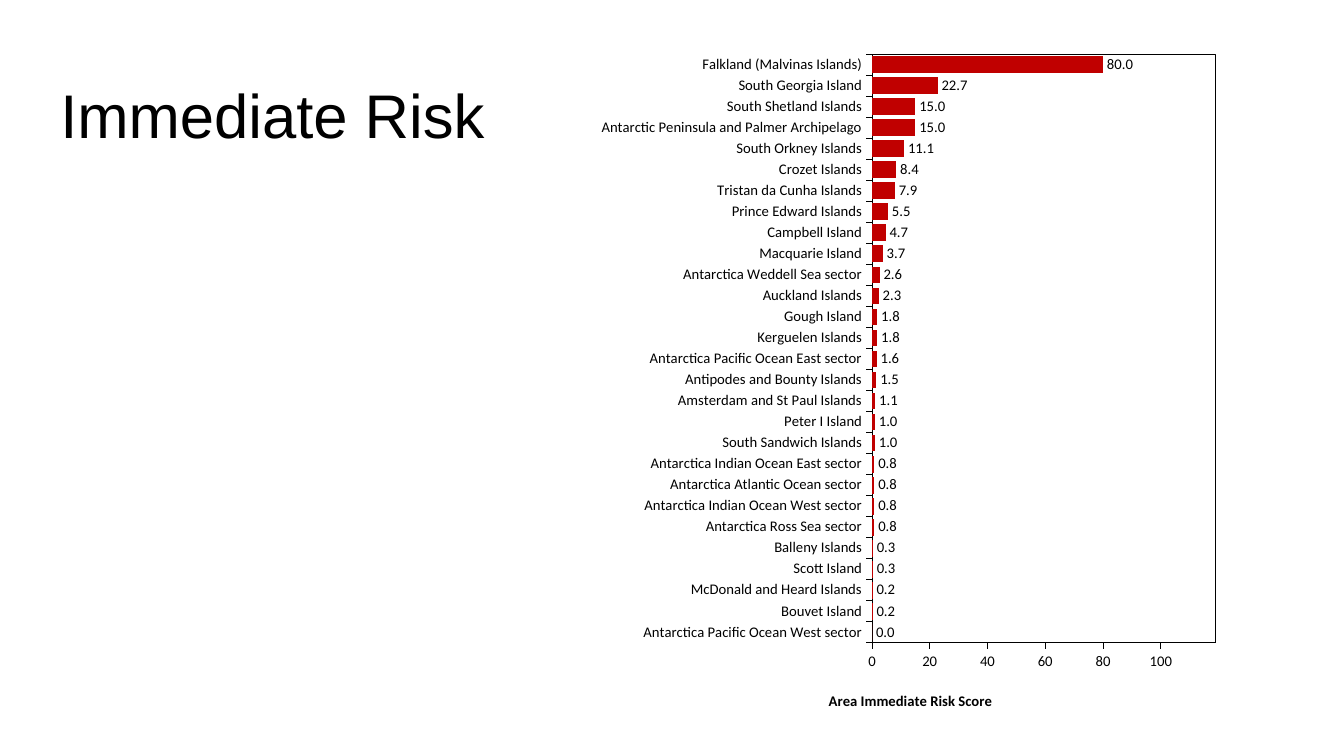
from lxml import etree
from pptx import Presentation
from pptx.chart.data import CategoryChartData as Data
from pptx.dml.color import RGBColor
from pptx.enum.chart import XL_CHART_TYPE as Kind, XL_LABEL_POSITION as Pos
from pptx.enum.chart import XL_TICK_MARK as Tick
from pptx.enum.text import MSO_ANCHOR as Anchor
from pptx.oxml import parse_xml
from pptx.oxml.ns import nsdecls, qn
from pptx.util import Cm, Pt

BLACK = RGBColor(0, 0, 0)
RED = RGBColor(0xC0, 0, 0)

SCORES = [
    ("Falkland (Malvinas Islands)", 80),
    ("South Georgia Island", 22.7),
    ("South Shetland Islands", 15),
    ("Antarctic Peninsula and Palmer Archipelago", 15),
    ("South Orkney Islands", 11.1),
    ("Crozet Islands", 8.4),
    ("Tristan da Cunha Islands", 7.9),
    ("Prince Edward Islands", 5.5),
    ("Campbell Island", 4.7),
    ("Macquarie Island", 3.7),
    ("Antarctica Weddell Sea sector", 2.6),
    ("Auckland Islands", 2.3),
    ("Gough Island", 1.8),
    ("Kerguelen Islands", 1.8),
    ("Antarctica Pacific Ocean East sector", 1.6),
    ("Antipodes and Bounty Islands", 1.5),
    ("Amsterdam and St Paul Islands", 1.1),
    ("Peter I Island", 1),
    ("South Sandwich Islands", 1),
    ("Antarctica Indian Ocean East sector", 0.8),
    ("Antarctica Atlantic Ocean sector", 0.8),
    ("Antarctica Indian Ocean West sector", 0.8),
    ("Antarctica Ross Sea sector", 0.8),
    ("Balleny Islands", 0.3),
    ("Scott Island", 0.3),
    ("McDonald and Heard Islands", 0.2),
    ("Bouvet Island", 0.2),
    ("Antarctica Pacific Ocean West sector", 0),
]


def place(parent, index, **parts):
    """Give a chart part a manual layout, in fractions of the chart."""
    for old in parent.findall(qn("c:layout")):
        parent.remove(old)
    layout = parse_xml(f"<c:layout {nsdecls('c')}><c:manualLayout/></c:layout>")
    modes = {"xMode": "edge", "yMode": "edge"}
    if "w" in parts:
        modes = {"layoutTarget": "inner", **modes}
    for tag, val in {**modes, **parts}.items():
        etree.SubElement(layout[0], qn(f"c:{tag}")).set("val", str(val))
    parent.insert(index, layout)


class Deck:
    def __init__(self):
        self.show = Presentation()
        self.show.slide_width = Cm(33.87)
        self.show.slide_height = Cm(19.05)
        self.slide = self.show.slides.add_slide(self.show.slide_layouts[6])

    def style(self, font, size, name="Calibri", bold=False):
        font.name, font.size, font.bold = name, Pt(size), bold
        font.color.rgb = BLACK

    def title(self, text, *box):
        frame = self.slide.shapes.add_textbox(*map(Cm, box)).text_frame
        frame.word_wrap = True
        frame.vertical_anchor = Anchor.MIDDLE
        frame.text = text
        self.style(frame.paragraphs[0].runs[0].font, 44, "Arial")

    def axis(self, axis):
        axis.has_major_gridlines = False
        axis.major_tick_mark = Tick.OUTSIDE
        axis.minor_tick_mark = Tick.NONE
        axis.format.line.color.rgb = BLACK
        axis.format.line.width = Pt(0.75)
        self.style(axis.tick_labels.font, 10.5)

    def bars(self, scores, label, *box):
        data = Data()
        data.categories = [area for area, _ in reversed(scores)]
        data.add_series("Series 1", [score for _, score in reversed(scores)])
        chart = self.slide.shapes.add_chart(
            Kind.BAR_CLUSTERED, *map(Cm, box), data).chart
        chart.has_title = chart.has_legend = False
        self.style(chart.font, 10.5)

        plot = chart.plots[0]
        plot.gap_width = 25
        plot.vary_by_categories = False
        fill = plot.series[0].format.fill
        fill.solid()
        fill.fore_color.rgb = RED
        plot.has_data_labels = True
        labels = plot.data_labels
        labels.show_value = True
        labels.position = Pos.OUTSIDE_END
        labels.number_format = "#,##0.0"
        labels.number_format_is_linked = False
        self.style(labels.font, 10.5)

        value = chart.value_axis
        self.axis(chart.category_axis)
        self.axis(value)
        value.minimum_scale, value.maximum_scale = 0, 119
        value.major_unit = 20
        title = value.axis_title
        title.text_frame.text = label
        self.style(title.text_frame.paragraphs[0].runs[0].font, 10.5, bold=True)
        place(title._element, 1, x=0.37, y=0.94)

        area = chart._chartSpace.chart.plotArea
        place(area, 0, x=0.442, y=0.02, w=0.538, h=0.854)
        area.append(parse_xml(
            f"<c:spPr {nsdecls('c', 'a')}><a:noFill/><a:ln w='{Pt(0.75)}'>"
            f"<a:solidFill><a:srgbClr val='{BLACK}'/></a:solidFill>"
            "</a:ln></c:spPr>"))


def main():
    deck = Deck()
    deck.title("Immediate Risk", 1.27, 1.02, 31.32, 3.68)
    deck.bars(SCORES, "Area Immediate Risk Score", 14.86, 1.02, 16.1, 17.37)
    deck.show.save("out.pptx")


if __name__ == "__main__":
    main()
